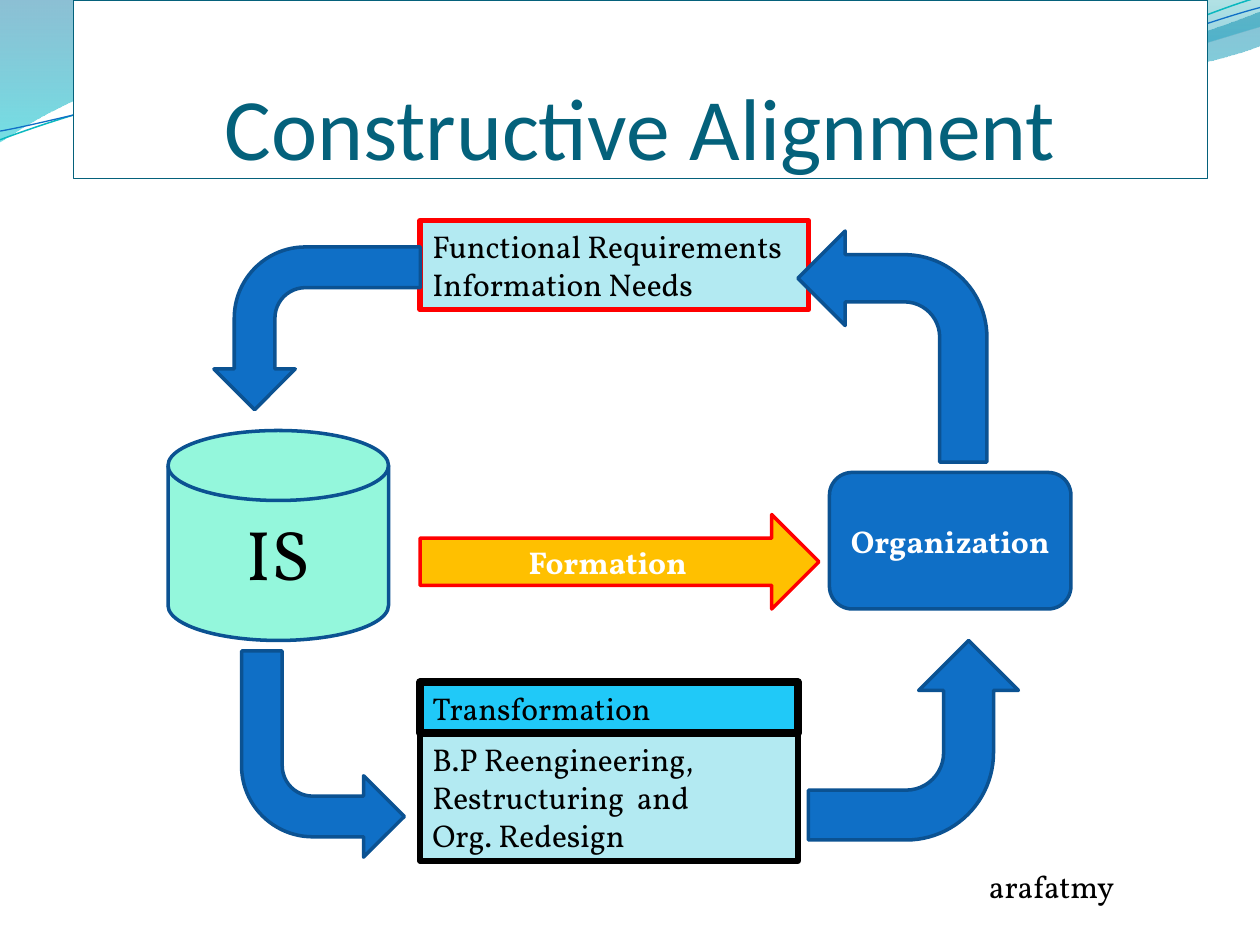
from lxml.etree import SubElement
from pptx import Presentation
from pptx.dml.color import RGBColor
from pptx.enum.shapes import MSO_SHAPE
from pptx.enum.text import MSO_ANCHOR, MSO_AUTO_SIZE, PP_ALIGN
from pptx.oxml.ns import qn
from pptx.util import Pt

BLUE, NAVY, TEAL, PALE = "0F6FC6", "0B5292", "04617B", "B3EAF2"
RED, BLACK, WHITE = "FF0000", "000000", "FFFFFF"
UNITS_PER_POINT = 100

UPPER_WAVE = [
    [(0, 0)],
    [(316.8, -0.7)],
    [(342.7, 12.2), (478.1, 45.4), (545.8, 45.4)],
    [(614.2, 45.4), (689.8, 18.7), (720, 6.5)],
    [(720.7, 25.9)],
    [(707.8, 31.7), (626.4, 54.7), (537.1, 54)],
    [(447.8, 54), (275, 20.2), (185, 24.5)],
    [(92.9, 25.9), (33.1, 59.8), (-0.7, 81.4)],
    [(0, 0)],
]
RIGHT_WAVE = [
    [(344.9, -0.7)],
    [(366.5, 7.9), (491, 44.6), (553.7, 46.8)],
    [(616.3, 49.7), (691.9, 23), (720, 15.1)],
    [(720, 0)],
    [(344.9, -0.7)],
]
TEAL_STRAND = [
    [(0, 79.9)],
    [(34.6, 67), (113.8, 41), (199.4, 37.4)],
    [(284.4, 33.8), (427, 64.1), (513.4, 57.6)],
    [(599.8, 51.1), (675.4, 10.8), (718.6, -1.4)],
]
BLUE_STRAND = [
    [(0, 74.9)],
    [(33.8, 69.1), (118.1, 43.9), (203.8, 40.3)],
    [(290.2, 36.7), (429.8, 60.5), (516.2, 54)],
    [(601.9, 48.2), (678.2, 15.1), (720, 4.3)],
]


def color(value):
    return RGBColor.from_string(value)


def bend_segments(shape, segments, left, top):
    lines = list(shape.element.spPr.iter(qn("a:lnTo")))
    for line, segment in zip(lines, segments):
        if len(segment) == 1:
            continue
        line.tag = qn("a:cubicBezTo")
        for index, (x, y) in enumerate(segment[:-1]):
            point = SubElement(line, qn("a:pt"), x=str(x - left), y=str(y - top))
            line.insert(index, point)


def add_outline(slide, outline, close):
    segments = [
        [(round(x * UNITS_PER_POINT), round(y * UNITS_PER_POINT)) for x, y in segment]
        for segment in outline
    ]
    anchors = [segment[-1] for segment in segments]
    builder = slide.shapes.build_freeform(*anchors[0], scale=Pt(1) / UNITS_PER_POINT)
    builder.add_line_segments(anchors[1:-1] if close else anchors[1:], close=close)
    shape = builder.convert_to_shape()
    shape.shadow.inherit = False
    left, top = (min(values) for values in zip(*anchors))
    bend_segments(shape, segments[1:], left, top)
    return shape


def add_wave(slide, outline, stops):
    shape = add_outline(slide, outline, True)
    shape.line.fill.background()
    shape.fill.gradient()
    shape.fill.gradient_angle = 270
    for stop, (position, value, opacity) in zip(shape.fill.gradient_stops, stops):
        stop.position = position
        stop.color.rgb = color(value)
    stop_colors = shape.element.spPr.iter(qn("a:srgbClr"))
    for element, (position, value, opacity) in zip(stop_colors, stops):
        SubElement(element, qn("a:alpha"), val=str(opacity * 1000))


def add_strand(slide, outline, line, width):
    shape = add_outline(slide, outline, False)
    shape.fill.background()
    paint_line(shape, line, width)


def paint_line(shape, line, width):
    shape.line.color.rgb = color(line)
    shape.line.width = Pt(width)


def paint(shape, fill, line, width):
    shape.fill.solid()
    shape.fill.fore_color.rgb = color(fill)
    paint_line(shape, line, width)


def add_figure(slide, kind, box, fill=BLUE, line=NAVY, width=2):
    shape = slide.shapes.add_shape(kind, *map(Pt, box))
    shape.shadow.inherit = False
    paint(shape, fill, line, width)
    return shape


def write(shape, lines, size=18, value=BLACK, bold=False, align=PP_ALIGN.LEFT, font="Vollkorn"):
    frame = shape.text_frame
    frame.word_wrap = True
    frame.text = "\n".join(lines)
    for paragraph in frame.paragraphs:
        paragraph.alignment = align
        paragraph.font.name = font
        paragraph.font.size = Pt(size)
        paragraph.font.bold = bold
        paragraph.font.color.rgb = color(value)


def fit_to_text(shape):
    shape.text_frame.vertical_anchor = MSO_ANCHOR.TOP
    shape.text_frame.auto_size = MSO_AUTO_SIZE.SHAPE_TO_FIT_TEXT


def add_node(slide, kind, box, text, fill=BLUE, line=NAVY, **style):
    shape = add_figure(slide, kind, box, fill, line)
    write(shape, [text], align=PP_ALIGN.CENTER, **style)
    shape.text_frame.vertical_anchor = MSO_ANCHOR.MIDDLE


def add_note(slide, box, lines, fill, line, width):
    shape = add_figure(slide, MSO_SHAPE.RECTANGLE, box, fill, line, width)
    write(shape, lines)
    fit_to_text(shape)


def add_bent_arrow(slide, box, rotation=0):
    shape = add_figure(slide, MSO_SHAPE.BENT_ARROW, box)
    shape.rotation = rotation
    shape.element.spPr.get_or_add_xfrm().set("flipH", "1")


def add_caption(slide, box, text):
    shape = slide.shapes.add_textbox(*map(Pt, box))
    write(shape, [text])
    fit_to_text(shape)


def set_title(slide, box, text):
    title = slide.shapes.title
    title.left, title.top, title.width, title.height = map(Pt, box)
    paint(title, WHITE, TEAL, 0.75)
    write(title, [text], size=50, value=TEAL, align=PP_ALIGN.CENTER, font="Calibri")
    frame = title.text_frame
    frame.auto_size = MSO_AUTO_SIZE.NONE
    frame.vertical_anchor = MSO_ANCHOR.BOTTOM
    frame.margin_left = frame.margin_right = frame.margin_bottom = 0
    frame.margin_top = Pt(3.6)
    title.element.getparent().append(title.element)


def main():
    presentation = Presentation()
    presentation.slide_width, presentation.slide_height = Pt(720), Pt(540)
    slide = presentation.slides.add_slide(presentation.slide_layouts[5])

    add_wave(slide, UPPER_WAVE, [(0, "0074A1", 45), (1, "00C6CF", 55)])
    add_wave(slide, RIGHT_WAVE, [(0, "00A1A9", 30), (0.8, "008BBF", 45)])
    add_strand(slide, TEAL_STRAND, "0AB8BF", 0.85)
    add_strand(slide, BLUE_STRAND, BLUE, 0.75)
    set_title(slide, (42, 0, 648, 102), "Constructive Alignment")

    add_node(slide, MSO_SHAPE.ROUNDED_RECTANGLE, (474, 270, 138, 78), "Organization",
             value=WHITE, bold=True)
    add_note(slide, (240, 126.1, 222, 50.9), ["Functional Requirements", "Information Needs"],
             PALE, RED, 3)
    add_node(slide, MSO_SHAPE.FLOWCHART_MAGNETIC_DISK, (96, 246, 126, 120), "IS",
             fill="94F7DC", size=40)
    add_note(slide, (240, 419.3, 216, 72.7),
             ["B.P Reengineering, Restructuring  and", "Org. Redesign"], PALE, BLACK, 3)
    add_bent_arrow(slide, (138, 372, 93, 117.8), 180)
    add_node(slide, MSO_SHAPE.RIGHT_ARROW, (240, 294, 228, 54), "Formation",
             fill="FFC000", line=RED, value=WHITE, bold=True)
    add_bent_arrow(slide, (465, 363, 114, 120), 90)
    add_note(slide, (240, 389.9, 216, 29.1), ["Transformation"], "20C9F8", BLACK, 4.5)
    add_bent_arrow(slide, (456, 132, 108, 132))
    add_bent_arrow(slide, (134.7, 128.6, 93, 118), 270)
    add_caption(slide, (558, 492, 144, 29.1), "arafatmy")

    presentation.save("out.pptx")


if __name__ == "__main__":
    main()
